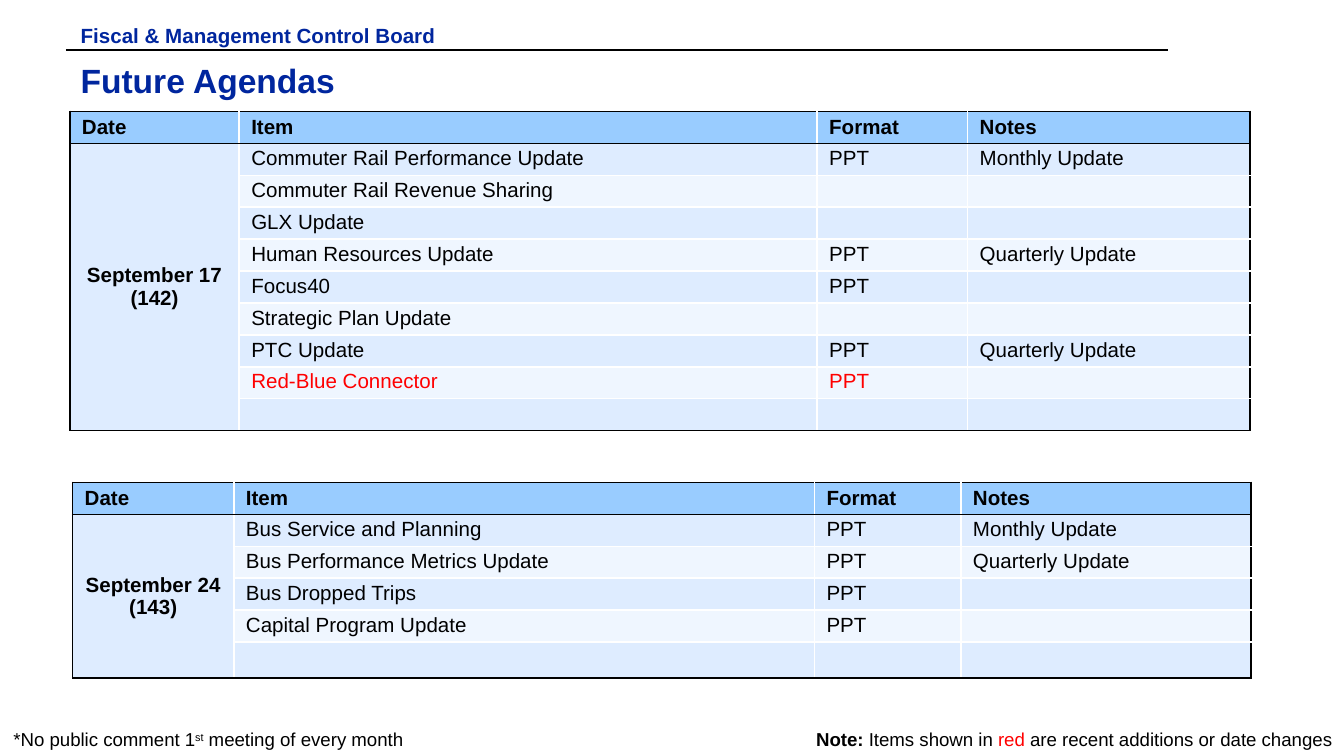
from lxml.etree import SubElement
from pptx import Presentation
from pptx.dml.color import RGBColor
from pptx.enum.shapes import MSO_CONNECTOR
from pptx.enum.text import MSO_ANCHOR, MSO_AUTO_SIZE, PP_ALIGN
from pptx.oxml.ns import qn
from pptx.util import Inches, Pt

BLACK = RGBColor(0x00, 0x00, 0x00)
WHITE = RGBColor(0xFF, 0xFF, 0xFF)
RED = RGBColor(0xFF, 0x00, 0x00)
NAVY = RGBColor(0x00, 0x26, 0x9E)
HEADER = RGBColor(0x99, 0xCC, 0xFF)
BANDS = (RGBColor(0xDE, 0xEC, 0xFF), RGBColor(0xEF, 0xF6, 0xFF))

HEADINGS = ("Date", "Item", "Format", "Notes")
SEPTEMBER_17 = [
    ("Commuter Rail Performance Update", "PPT", "Monthly Update"),
    ("Commuter Rail Revenue Sharing", "", ""),
    ("GLX Update", "", ""),
    ("Human Resources Update", "PPT", "Quarterly Update"),
    ("Focus40", "PPT", ""),
    ("Strategic Plan Update", "", ""),
    ("PTC Update", "PPT", "Quarterly Update"),
    ("Red-Blue Connector", "PPT", ""),
    ("", "", ""),
]
SEPTEMBER_24 = [
    ("Bus Service and Planning", "PPT", "Monthly Update"),
    ("Bus Performance Metrics Update", "PPT", "Quarterly Update"),
    ("Bus Dropped Trips", "PPT", ""),
    ("Capital Program Update", "PPT", ""),
    ("", "", ""),
]


class AgendaSlide:
    """Holds the agenda style and draws elements on one slide."""

    font = "Arial"
    table_size = 11
    row_height = 0.23

    def __init__(self, prs):
        self.s = prs.slides.add_slide(prs.slide_layouts[6])

    def run(self, p, text, size, color=BLACK, bold=False, baseline=0):
        r = p.add_run()
        r.text = text
        r.font.name = self.font
        r.font.size = Pt(size)
        r.font.bold = bold
        r.font.color.rgb = color
        if baseline:
            r.font._element.set("baseline", str(baseline * 1000))

    def text(self, left, top, width, height, runs, align=PP_ALIGN.LEFT, wrap=True, grow=False):
        sp = self.s.shapes.add_textbox(Inches(left), Inches(top), Inches(width), Inches(height))
        tf = sp.text_frame
        tf.word_wrap = wrap
        tf.auto_size = MSO_AUTO_SIZE.SHAPE_TO_FIT_TEXT if grow else MSO_AUTO_SIZE.NONE
        tf.margin_left = tf.margin_right = Inches(0.09)
        tf.margin_top = tf.margin_bottom = Inches(0.05)
        p = tf.paragraphs[0]
        p.alignment = align
        for text, style in runs:
            self.run(p, text, **style)

    def rule(self, x1, x2, y):
        line = self.s.shapes.add_connector(
            MSO_CONNECTOR.STRAIGHT, Inches(x1), Inches(y), Inches(x2), Inches(y))
        line.line.color.rgb = BLACK
        line.line.width = Pt(1)
        SubElement(line._element.spPr, qn("a:effectLst"))

    def borders(self, cell, black_sides):
        tcPr = cell._tc.get_or_add_tcPr()
        for side in "LRTB":
            ln = SubElement(tcPr, qn(f"a:ln{side}"), w=str(Pt(1)))
            fill = SubElement(ln, qn("a:solidFill"))
            color = BLACK if side in black_sides else WHITE
            SubElement(fill, qn("a:srgbClr"), val=str(color))

    def cell(self, cell, text, fill, black_sides, color=BLACK, bold=False,
             anchor=MSO_ANCHOR.TOP, align=PP_ALIGN.LEFT):
        self.borders(cell, black_sides)
        cell.fill.solid()
        cell.fill.fore_color.rgb = fill
        cell.margin_left = cell.margin_right = Inches(0.09)
        cell.margin_top = cell.margin_bottom = Pt(1.93)
        cell.vertical_anchor = anchor
        tf = cell.text_frame
        for i, line in enumerate(text.split("\n")):
            p = tf.add_paragraph() if i else tf.paragraphs[0]
            p.alignment = align
            if line:
                self.run(p, line, self.table_size, color, bold)
            else:
                SubElement(p._p, qn("a:endParaRPr"), sz=str(self.table_size * 100))

    def agenda(self, left, top, widths, date, items, last_height, new_items=()):
        rows = [HEADINGS] + [(date if i == 0 else "", *item) for i, item in enumerate(items)]
        last_row, last_col = len(rows) - 1, len(widths) - 1
        height = self.row_height * last_row + last_height
        table = self.s.shapes.add_table(
            len(rows), len(widths), Inches(left), Inches(top),
            Inches(sum(widths)), Inches(height)).table
        for column, width in zip(table.columns, widths):
            column.width = Inches(width)
        for row in table.rows:
            row.height = Inches(self.row_height)
        table.rows[last_row].height = Inches(last_height)
        table.cell(1, 0).merge(table.cell(last_row, 0))

        for i, values in enumerate(rows):
            for j, value in enumerate(values):
                cell = table.cell(i, j)
                heading, dated = i == 0, j == 0 and i > 0
                edges = {"L": j == 0, "R": j == last_col, "T": i <= 1,
                         "B": i in (0, last_row) or cell.is_merge_origin}
                self.cell(
                    cell, value,
                    HEADER if heading else BANDS[0 if dated else (i - 1) % 2],
                    [side for side, black in edges.items() if black],
                    color=RED if values[1] in new_items else BLACK,
                    bold=heading or dated,
                    anchor=MSO_ANCHOR.MIDDLE if heading or dated else MSO_ANCHOR.TOP,
                    align=PP_ALIGN.CENTER if dated else PP_ALIGN.LEFT)


def main():
    prs = Presentation()
    prs.slide_width, prs.slide_height = Inches(10), Inches(10 * 9 / 16)
    slide = AgendaSlide(prs)
    note = {"size": 10}

    slide.rule(0.49, 8.69, 0.37)
    slide.text(0.01, 5.37, 4.16, 0.26, [
        ("*No public comment 1", note),
        ("st", {**note, "baseline": 30}),
        (" meeting of every month", note),
    ], grow=True)
    slide.text(5.8, 5.37, 4.2, 0.26, [
        ("Note: ", {**note, "bold": True}),
        ("Items shown in ", note),
        ("red", {**note, "color": RED}),
        (" are recent additions or date changes", note),
    ], align=PP_ALIGN.RIGHT, wrap=False, grow=True)
    slide.text(0.51, 0.4, 8.36, 0.48,
               [("Future Agendas", {"size": 18, "color": NAVY, "bold": True})])
    slide.text(0.51, 0.12, 3.41, 0.19,
               [("Fiscal & Management Control Board", {"size": 11, "color": NAVY, "bold": True})])
    slide.agenda(0.52, 0.83, (1.26, 4.3, 1.12, 2.1), "September 17\n(142)",
                 SEPTEMBER_17, 0.23, new_items=("Red-Blue Connector",))
    slide.agenda(0.54, 3.59, (1.2, 4.32, 1.09, 2.16), "September 24\n(143)",
                 SEPTEMBER_24, 0.27)
    prs.save("out.pptx")


if __name__ == "__main__":
    main()
